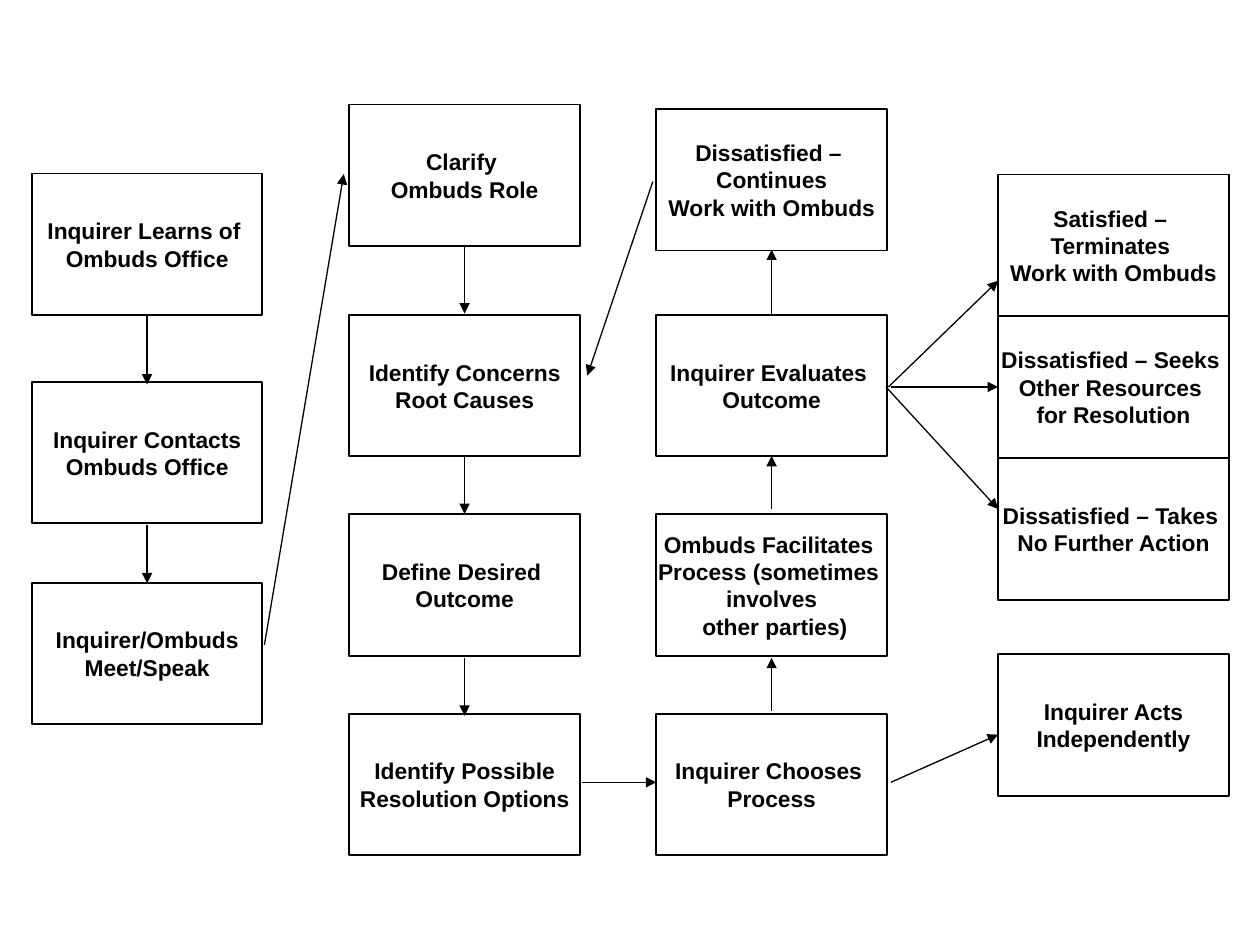
from dataclasses import dataclass
from typing import NamedTuple

import lxml.etree
import pptx
import pptx.dml.color
import pptx.enum.shapes
import pptx.enum.text
import pptx.oxml.ns
import pptx.util
from pptx.util import Cm


@dataclass(frozen=True)
class Theme:
    ink: pptx.dml.color.RGBColor = pptx.dml.color.RGBColor(0, 0, 0)
    font: str = "Arial"
    text_size: pptx.util.Pt = pptx.util.Pt(13)
    box_line: pptx.util.Pt = pptx.util.Pt(1)
    arrow_line: pptx.util.Pt = pptx.util.Pt(0.75)


class Step(NamedTuple):
    left: float
    top: float
    lines: tuple[str, ...]


class Arrow(NamedTuple):
    x1: float
    y1: float
    x2: float
    y2: float


THEME = Theme()
BOX_WIDTH, BOX_HEIGHT = 4.65, 2.85
CONTACT, EXPLORE, PROCESS, RESULT = 0.64, 7.04, 13.23, 20.12
ROWS = (2.11, 6.35, 10.37, 14.39)

STEPS = (
    Step(EXPLORE, ROWS[0], ("Clarify ", "Ombuds Role")),
    Step(EXPLORE, ROWS[1], ("Identify Concerns", "Root Causes")),
    Step(EXPLORE, ROWS[2], ("Define Desired ", "Outcome")),
    Step(EXPLORE, ROWS[3], ("Identify Possible", "Resolution Options")),
    Step(PROCESS, ROWS[3], ("Inquirer Chooses ", "Process")),
    Step(PROCESS, ROWS[2], ("Ombuds Facilitates ", "Process (sometimes ",
                            "involves", " other parties)")),
    Step(RESULT, 13.19, ("Inquirer Acts", "Independently")),
    Step(PROCESS, ROWS[1], ("Inquirer Evaluates ", "Outcome")),
    Step(PROCESS, 2.2, ("Dissatisfied – ", "Continues", "Work with Ombuds")),
    Step(CONTACT, 3.5, ("Inquirer Learns of ", "Ombuds Office")),
    Step(CONTACT, 7.7, ("Inquirer Contacts", "Ombuds Office")),
    Step(CONTACT, 11.75, ("Inquirer/Ombuds", "Meet/Speak")),
)

OUTCOMES = (
    ("Satisfied – ", "Terminates ", "Work with Ombuds"),
    ("Dissatisfied – Seeks ", "Other Resources ", "for Resolution"),
    ("Dissatisfied – Takes ", "No Further Action"),
)
OUTCOMES_TOP, OUTCOMES_PITCH = 3.52, 2.86

# Start and end heights of the vertical arrows, by column
VERTICAL_ARROWS = {
    CONTACT: ((6.35, 7.75), (10.59, 11.76)),
    EXPLORE: ((4.93, 6.32), (9.19, 10.36), (13.26, 14.43)),
    PROCESS: ((14.33, 13.26), (10.26, 9.19), (6.32, 5.03)),
}
CROSS_ARROWS = (
    Arrow(5.33, 13, 6.93, 3.51),
    Arrow(11.73, 15.77, PROCESS, 15.77),
    Arrow(17.96, 15.77, RESULT, 14.81),
    Arrow(17.91, 7.8, RESULT, 5.66),
    Arrow(17.96, 7.8, RESULT, 7.8),
    Arrow(17.86, 7.8, RESULT, 10.26),
    Arrow(13.16, 3.66, 11.84, 7.57),
)


def draw_step(shapes, step: Step) -> None:
    box = shapes.add_shape(
        pptx.enum.shapes.MSO_SHAPE.FLOWCHART_PROCESS,
        Cm(step.left), Cm(step.top), Cm(BOX_WIDTH), Cm(BOX_HEIGHT))
    box.shadow.inherit = False
    box.fill.background()
    box.line.color.rgb = THEME.ink
    box.line.width = THEME.box_line

    frame = box.text_frame
    frame.word_wrap = False
    frame.vertical_anchor = pptx.enum.text.MSO_ANCHOR.MIDDLE
    for number, line in enumerate(step.lines):
        paragraph = frame.add_paragraph() if number else frame.paragraphs[0]
        paragraph.alignment = pptx.enum.text.PP_ALIGN.CENTER
        run = paragraph.add_run()
        run.text = line
        run.font.name = THEME.font
        run.font.size = THEME.text_size
        run.font.bold = True
        run.font.color.rgb = THEME.ink


def draw_arrow(shapes, arrow: Arrow) -> None:
    connector = shapes.add_connector(
        pptx.enum.shapes.MSO_CONNECTOR.STRAIGHT, *map(Cm, arrow))
    connector.line.color.rgb = THEME.ink
    connector.line.width = THEME.arrow_line
    qn = pptx.oxml.ns.qn
    properties = connector.element.spPr
    lxml.etree.SubElement(properties.find(qn("a:ln")), qn("a:tailEnd"),
                          type="triangle")
    lxml.etree.SubElement(properties, qn("a:effectLst"))


def main() -> None:
    presentation = pptx.Presentation()
    presentation.slide_width, presentation.slide_height = Cm(25.4), Cm(19.05)
    shapes = presentation.slides.add_slide(
        presentation.slide_layouts.get_by_name("Blank")).shapes

    for step in STEPS:
        draw_step(shapes, step)

    outcome_group = shapes.add_group_shape()
    for row, lines in enumerate(OUTCOMES):
        top = OUTCOMES_TOP + row * OUTCOMES_PITCH
        draw_step(outcome_group.shapes, Step(RESULT, top, lines))

    for left, spans in VERTICAL_ARROWS.items():
        centre = left + BOX_WIDTH / 2
        for start, end in spans:
            draw_arrow(shapes, Arrow(centre, start, centre, end))
    for arrow in CROSS_ARROWS:
        draw_arrow(shapes, arrow)

    presentation.save("out.pptx")


if __name__ == "__main__":
    main()
